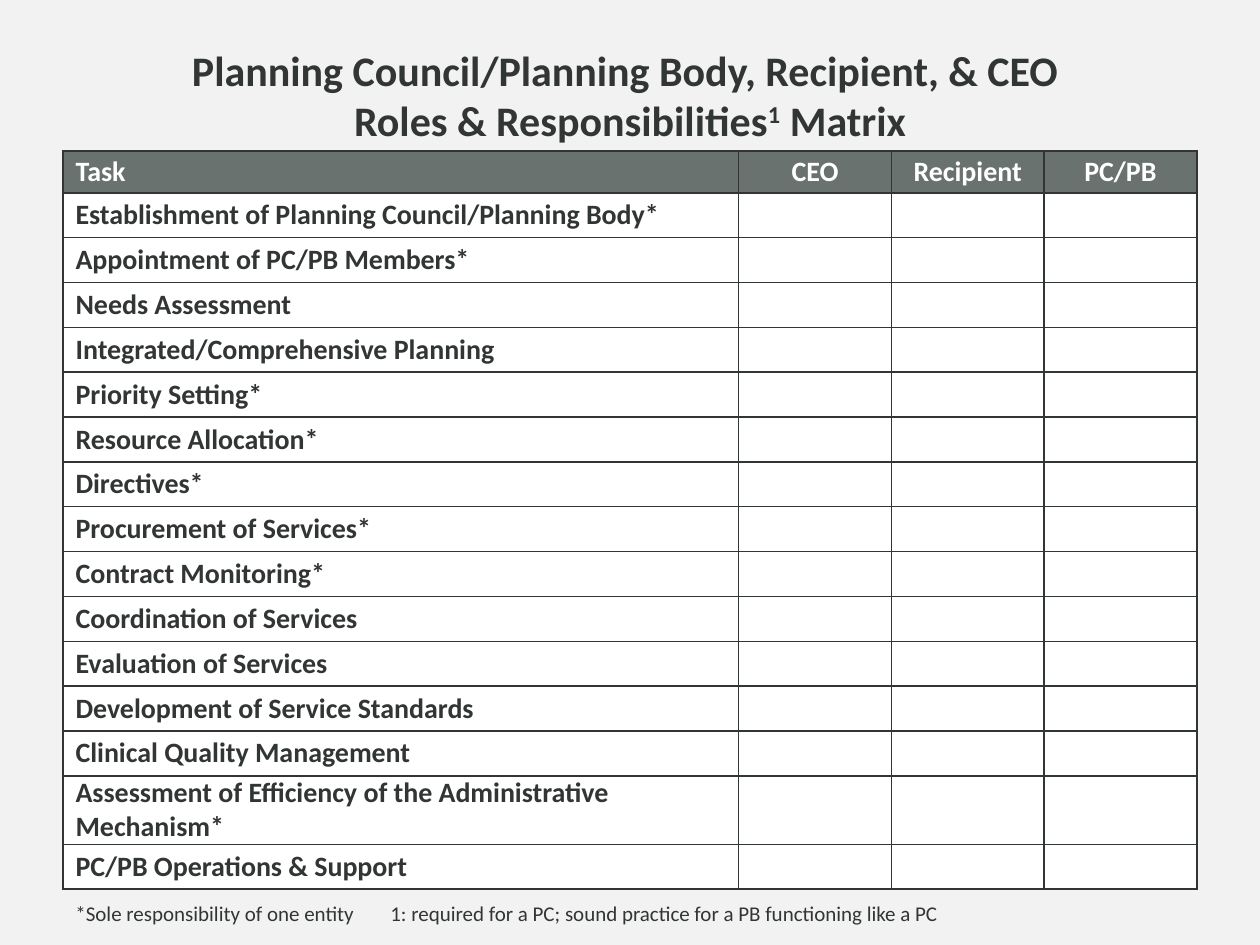
"""Build the roles and responsibilities matrix slide."""
from lxml.etree import SubElement
from pptx import Presentation
from pptx.dml.color import RGBColor
from pptx.enum.text import MSO_ANCHOR, MSO_AUTO_SIZE, PP_ALIGN
from pptx.oxml.ns import qn
from pptx.util import Pt

INK = RGBColor(0x31, 0x35, 0x34)
SLATE = RGBColor(0x69, 0x72, 0x6F)
WHITE = RGBColor(0xFF, 0xFF, 0xFF)
PALE = RGBColor(0xF2, 0xF2, 0xF2)
FONT = "Calibri"

TITLE = [
    ("Planning Council/Planning Body, Recipient, & CEO \vRoles & Responsibilities", False),
    ("1", True),
    (" Matrix", False),
]
HEADS = ["Task", "CEO", "Recipient", "PC/PB"]
TASKS = [
    "Establishment of Planning Council/Planning Body*",
    "Appointment of PC/PB Members*",
    "Needs Assessment",
    "Integrated/Comprehensive Planning",
    "Priority Setting*",
    "Resource Allocation*",
    "Directives*",
    "Procurement of Services*",
    "Contract Monitoring*",
    "Coordination of Services",
    "Evaluation of Services",
    "Development of Service Standards",
    "Clinical Quality Management",
    "Assessment of Efficiency of the Administrative Mechanism*",
    "PC/PB Operations & Support",
]
NOTE = ("*Sole responsibility of one entity\t"
        "1: required for a PC; sound practice for a PB functioning like a PC")

LEFT, WIDTH = 36, 648
WIDTHS = [386.1, 87.3, 87.3, 87.3]
HEAD_H, ROW_H = 23.8, 25.65


def style(para, size, color, bold=False):
    font = para.font
    font.name, font.size, font.bold = FONT, Pt(size), bold
    font.color.rgb = color


def border(cell):
    props = cell._tc.get_or_add_tcPr()
    for at, side in enumerate(("lnL", "lnR", "lnT", "lnB")):
        line = SubElement(props, qn(f"a:{side}"), w=str(Pt(1)))
        fill = SubElement(line, qn("a:solidFill"))
        SubElement(fill, qn("a:srgbClr"), val=str(INK))
        props.insert(at, line)


def add_title(slide):
    shape = slide.shapes.title
    shape.left, shape.top, shape.width, shape.height = map(Pt, (LEFT, 21.6, WIDTH, 90))
    frame = shape.text_frame
    frame.auto_size = MSO_AUTO_SIZE.NONE
    frame.vertical_anchor = MSO_ANCHOR.TOP
    para = frame.paragraphs[0]
    para.text = TITLE[0][0]
    for text, _ in TITLE[1:]:
        para.add_run().text = text
    para.alignment = PP_ALIGN.CENTER
    style(para, 24, INK, True)
    para.runs[-2]._r.get_or_add_rPr().set("baseline", "30000")


def add_matrix(slide):
    rows = [HEADS] + [[task, "", "", ""] for task in TASKS]
    high = HEAD_H + ROW_H * len(TASKS)
    table = slide.shapes.add_table(
        len(rows), len(HEADS), Pt(LEFT), Pt(86.4), Pt(WIDTH), Pt(high)).table
    for col, width in zip(table.columns, WIDTHS):
        col.width = Pt(width)
    for r, row in enumerate(rows):
        table.rows[r].height = Pt(ROW_H if r else HEAD_H)
        for c, text in enumerate(row):
            cell = table.cell(r, c)
            cell.text = text
            cell.vertical_anchor = MSO_ANCHOR.MIDDLE
            cell.margin_left = Pt(0 if c else 7.2)
            cell.margin_right = cell.margin_top = cell.margin_bottom = 0
            cell.fill.solid()
            cell.fill.fore_color.rgb = WHITE if r else SLATE
            border(cell)
            para = cell.text_frame.paragraphs[0]
            para.alignment = PP_ALIGN.CENTER if c else PP_ALIGN.LEFT
            style(para, 16, INK if r else WHITE, True)


def add_note(slide):
    box = slide.shapes.add_textbox(Pt(LEFT), Pt(511.2), Pt(WIDTH), Pt(21.6))
    frame = box.text_frame
    frame.word_wrap = True
    frame.text = NOTE
    style(frame.paragraphs[0], 12, INK)


def main():
    deck = Presentation()
    deck.slide_width, deck.slide_height = Pt(720), Pt(540)
    slide = deck.slides.add_slide(deck.slide_layouts[5])
    slide.background.fill.solid()
    slide.background.fill.fore_color.rgb = PALE
    add_title(slide)
    add_matrix(slide)
    add_note(slide)
    deck.save("out.pptx")


if __name__ == "__main__":
    main()
